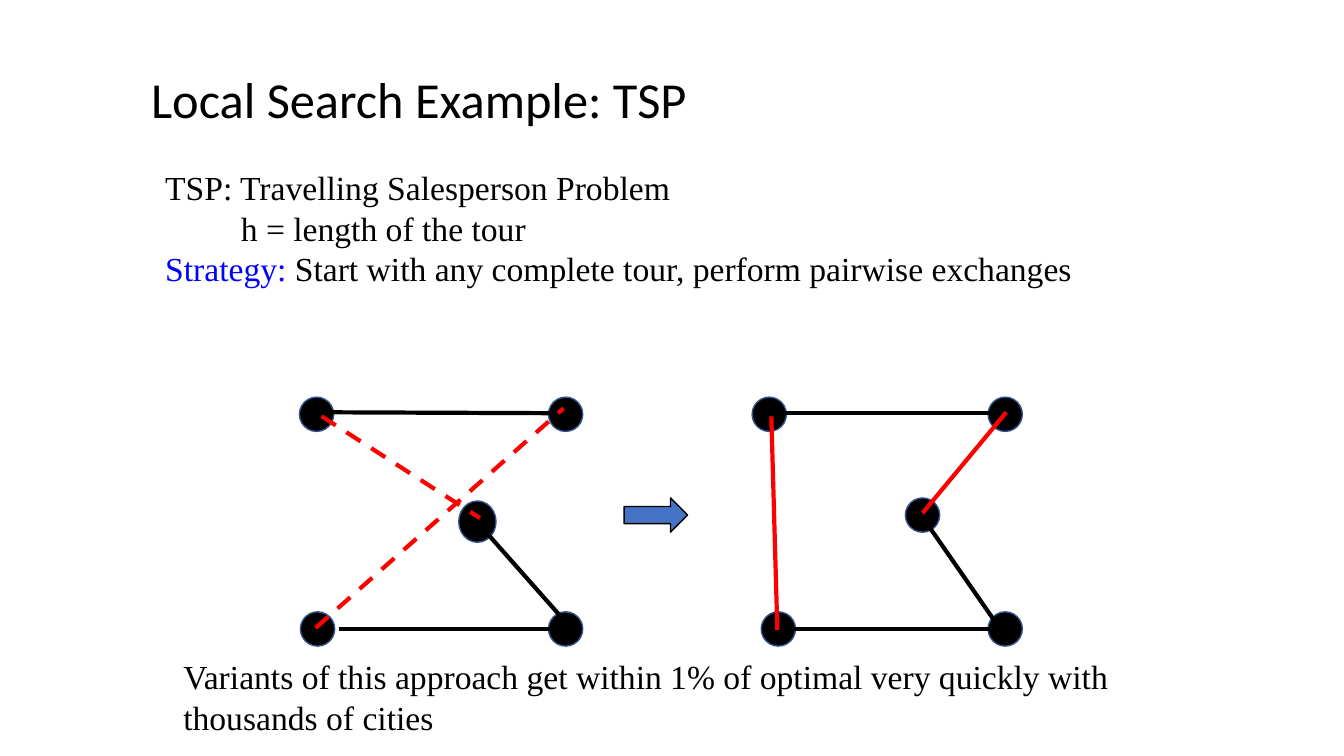
import pptx
import pptx.util
import pptx.dml.color
import pptx.enum.dml
import pptx.enum.shapes
import pptx.enum.text
import pptx.oxml.ns
import lxml.etree

Inches = pptx.util.Inches
MSO_SHAPE = pptx.enum.shapes.MSO_SHAPE
COLORS = {"black": "000000", "red": "FF0000", "blue": "0000FF",
          "arrow": "4472C4", "outline": "325491"}


def rgb(name):
    return pptx.dml.color.RGBColor.from_string(COLORS[name])


def add_filled_shape(kind, position, fill, line):
    shape = slide.shapes.add_shape(kind, *map(Inches, position))
    shape.shadow.inherit = False
    shape.fill.solid()
    shape.fill.fore_color.rgb = rgb(fill)
    shape.line.color.rgb = rgb(line)
    shape.line.width = pptx.util.Pt(1)


presentation = pptx.Presentation()
presentation.slide_width = Inches(13.33)
presentation.slide_height = Inches(7.5)
slide = presentation.slides.add_slide(presentation.slide_layouts[6])

# Text: position, wrapping, font, then paragraphs as (indent, runs)
title_font = {"name": "Calibri", "size": pptx.util.Pt(36)}
body_font = {"name": "Times New Roman", "size": pptx.util.Pt(24)}
texts = [
    ((1.4, 0.63, 5.56, 0.71), False, title_font,
     [(0, [("Local Search Example: TSP", "black")])]),
    ((1.54, 1.61, 9.46, 1.31), True, body_font,
     [(0, [("TSP: Travelling Salesperson Problem", "black")]),
      (0.75, [("h = length of the tour", "black")]),
      (0, [("Strategy: ", "blue"),
           ("Start with any complete tour, perform pairwise exchanges", "black")])]),
    ((1.72, 6.46, 9.46, 0.91), True, body_font,
     [(0, [("Variants of this approach get within 1% of optimal very quickly "
            "with thousands of cities", "black")])]),
]
for position, wrap, font, paragraphs in texts:
    frame = slide.shapes.add_textbox(*map(Inches, position)).text_frame
    frame.word_wrap = wrap
    frame.auto_size = pptx.enum.text.MSO_AUTO_SIZE.SHAPE_TO_FIT_TEXT
    for index, (indent, runs) in enumerate(paragraphs):
        paragraph = frame.add_paragraph() if index else frame.paragraphs[0]
        if indent:
            paragraph._p.get_or_add_pPr().set("marL", str(Inches(indent)))
        for text, color in runs:
            run = paragraph.add_run()
            run.text = text
            run.font.color.rgb = rgb(color)
            for attribute, value in font.items():
                setattr(run.font, attribute, value)

# Cities of both tours; the left middle one is larger
cities = [(left, 3.94, 0.34, 0.34) for left in (2.97, 5.44, 7.46, 9.8)]
cities += [(8.98, 4.94, 0.34, 0.34), (4.55, 4.97, 0.37, 0.41)]
cities += [(left, 6.07, 0.34, 0.34) for left in (2.98, 5.44, 7.55, 9.8)]
for city in cities:
    add_filled_shape(MSO_SHAPE.OVAL, city, "black", "outline")

# Roads: kept in black, removed in dashed red, added in solid red
roads = [
    ((3.13, 4.09, 5.61, 4.1), "black", False),
    ((3.36, 6.24, 5.61, 6.24), "black", False),
    ((7.69, 4.1, 9.94, 4.1), "black", False),
    ((7.72, 6.24, 9.97, 6.24), "black", False),
    ((4.68, 5.12, 5.68, 6.25), "black", False),
    ((9.08, 5.03, 9.92, 6.24), "black", False),
    ((3.19, 4.13, 4.76, 5.14), "red", True),
    ((9.98, 4.09, 9.15, 5.09), "red", False),
    ((3.13, 6.23, 5.59, 4.05), "red", True),
    ((7.65, 4.13, 7.71, 6.25), "red", False),
]
for ends, color, dashed in roads:
    road = slide.shapes.add_connector(
        pptx.enum.shapes.MSO_CONNECTOR.STRAIGHT, *map(Inches, ends))
    road.line.color.rgb = rgb(color)
    road.line.width = pptx.util.Pt(3)
    if dashed:
        road.line.dash_style = pptx.enum.dml.MSO_LINE.DASH
    lxml.etree.SubElement(road._element.spPr, pptx.oxml.ns.qn("a:effectLst"))

# Arrow between the two tours
add_filled_shape(MSO_SHAPE.RIGHT_ARROW, (6.19, 4.94, 0.63, 0.34), "arrow", "black")

presentation.save("out.pptx")
